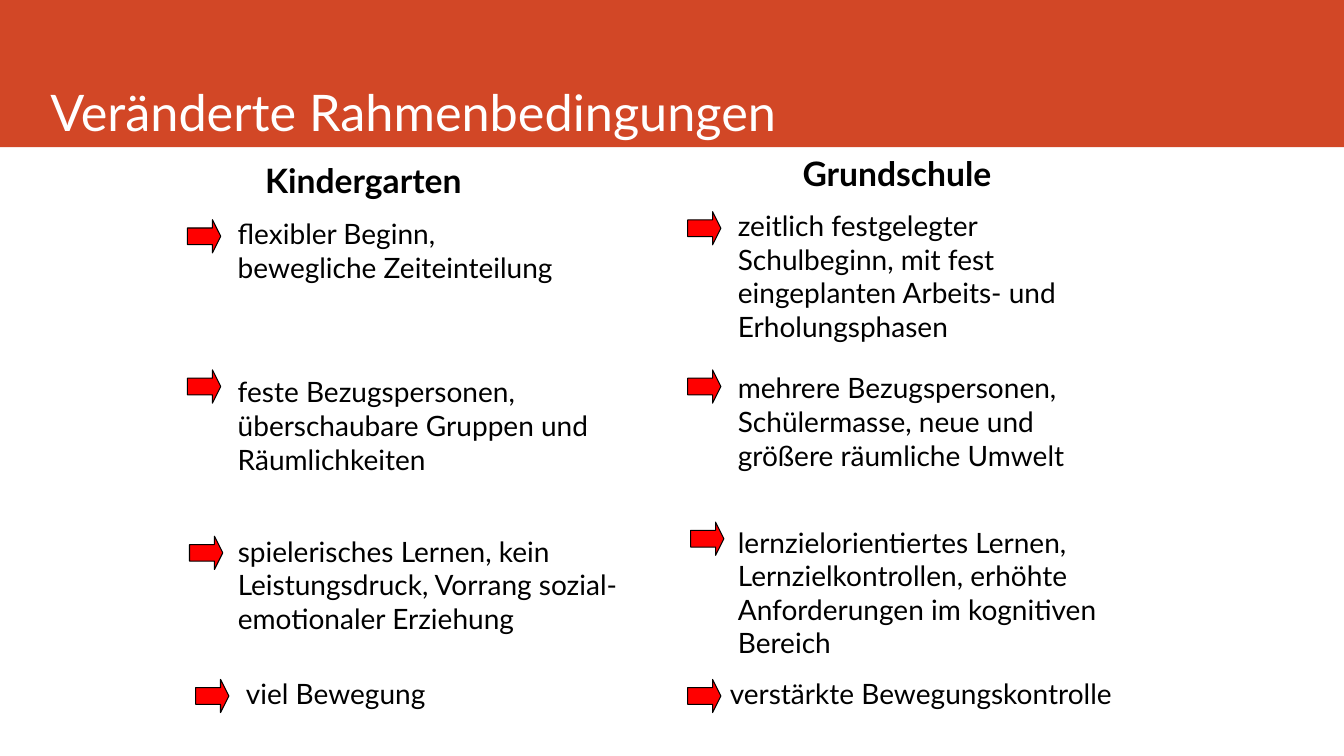
from dataclasses import dataclass

from pptx import Presentation
from pptx.dml.color import RGBColor
from pptx.enum.shapes import MSO_SHAPE
from pptx.enum.text import MSO_ANCHOR, MSO_AUTO_SIZE, PP_ALIGN
from pptx.util import Inches, Pt

RECT = MSO_SHAPE.RECTANGLE
ARROW = MSO_SHAPE.RIGHT_ARROW
LEFT = PP_ALIGN.LEFT
TOP, BOTTOM = MSO_ANCHOR.TOP, MSO_ANCHOR.BOTTOM
FIT, FIXED = MSO_AUTO_SIZE.SHAPE_TO_FIT_TEXT, MSO_AUTO_SIZE.NONE

FONT = "Lato"
BLACK, WHITE, RED, BRICK = "000000", "FFFFFF", "FF0000", "D24726"
SIDE = 0.33  # arrow width and height


@dataclass
class Box:
    left: float
    top: float
    width: float
    height: float


@dataclass
class Head:
    text: str
    box: Box
    inset: float


@dataclass
class Item:
    text: str
    box: Box
    left: float  # arrow position
    top: float


HEADS = [
    Head("Kindergarten", Box(2.11, 1.54, 4.17, 0.5), 0.52),
    Head("Grundschule", Box(7.53, 1.47, 3.75, 0.5), 0.43),
]

ITEMS = [
    # Kindergarten
    Item("flexibler Beginn, bewegliche Zeiteinteilung",
         Box(2.26, 2.1, 3.5, 0.77), 1.86, 2.18),
    Item("feste Bezugspersonen, überschaubare Gruppen und Räumlichkeiten",
         Box(2.26, 3.67, 3.83, 1.1), 1.86, 3.67),
    Item("spielerisches Lernen, kein Leistungsdruck, Vorrang "
         "sozial-emotionaler Erziehung",
         Box(2.26, 5.25, 4.25, 1.1), 1.88, 5.32),
    Item("viel Bewegung", Box(2.34, 6.66, 3.92, 0.43), 1.94, 6.74),
    # Grundschule
    Item("zeitlich festgelegter Schulbeginn, mit fest eingeplanten "
         "Arbeits- und Erholungsphasen",
         Box(7.22, 2.02, 4, 1.45), 6.82, 2.1),
    Item("mehrere Bezugspersonen, Schülermasse, neue und größere "
         "räumliche Umwelt",
         Box(7.22, 3.63, 4, 1.1), 6.82, 3.67),
    Item("lernzielorientiertes Lernen, Lernzielkontrollen, erhöhte "
         "Anforderungen im kognitiven Bereich",
         Box(7.22, 5.16, 4, 1.43), 6.85, 5.18),
    Item("verstärkte Bewegungskontrolle",
         Box(7.14, 6.66, 4, 0.43), 6.82, 6.74),
]


def place(box: Box) -> list[Inches]:
    return [Inches(n) for n in (box.left, box.top, box.width, box.height)]


def paint(target, color: str) -> None:
    """Colour a fill, given as a hex string."""
    target.solid()
    target.fore_color.rgb = RGBColor.from_string(color)


def write(shape, text: str, *, size: float = 20, color: str = BLACK,
          bold: bool = False, inset: float = 0.1,
          anchor=TOP, fit=FIT) -> None:
    frame = shape.text_frame
    frame.text = text
    frame.word_wrap = True
    frame.auto_size = fit
    frame.vertical_anchor = anchor
    frame.margin_left = Inches(inset)
    line = frame.paragraphs[0]
    line.alignment = LEFT
    font = line.runs[0].font
    font.name, font.size, font.bold = FONT, Pt(size), bold
    paint(font.fill, color)


def draw(slide, kind, box: Box, color: str, edge: str = ""):
    shape = slide.shapes.add_shape(kind, *place(box))
    shape.shadow.inherit = False
    paint(shape.fill, color)
    if edge:
        paint(shape.line.fill, edge)
        shape.line.width = Pt(0.75)
    else:
        shape.line.fill.background()
    return shape


def point(slide, left: float, top: float) -> None:
    arrow = draw(slide, ARROW, Box(left, top, SIDE, SIDE), RED, BLACK)
    arrow.adjustments[0] = 0.5
    arrow.adjustments[1] = 0.25


def main() -> None:
    prs = Presentation()
    prs.slide_width, prs.slide_height = Inches(13.33), Inches(7.5)
    slide = prs.slides.add_slide(prs.slide_layouts[5])

    # Title on its band
    band = draw(slide, RECT, Box(0, 0, 13.33, 1.46), BRICK)
    title = slide.shapes.title
    title.element.addprevious(band.element)
    title.left, title.top, title.width, title.height = place(
        Box(0.4, 0.21, 8.5, 1.25))
    write(title, "Veränderte Rahmenbedingungen", size=36, color=WHITE,
          anchor=BOTTOM, fit=FIXED)

    # Column heads
    for head in HEADS:
        label = slide.shapes.add_textbox(*place(head.box))
        write(label, head.text, size=24, bold=True, inset=head.inset)

    # Items with their arrows
    for item in ITEMS:
        point(slide, item.left, item.top)
        write(slide.shapes.add_textbox(*place(item.box)), item.text)

    prs.save("out.pptx")


if __name__ == "__main__":
    main()
